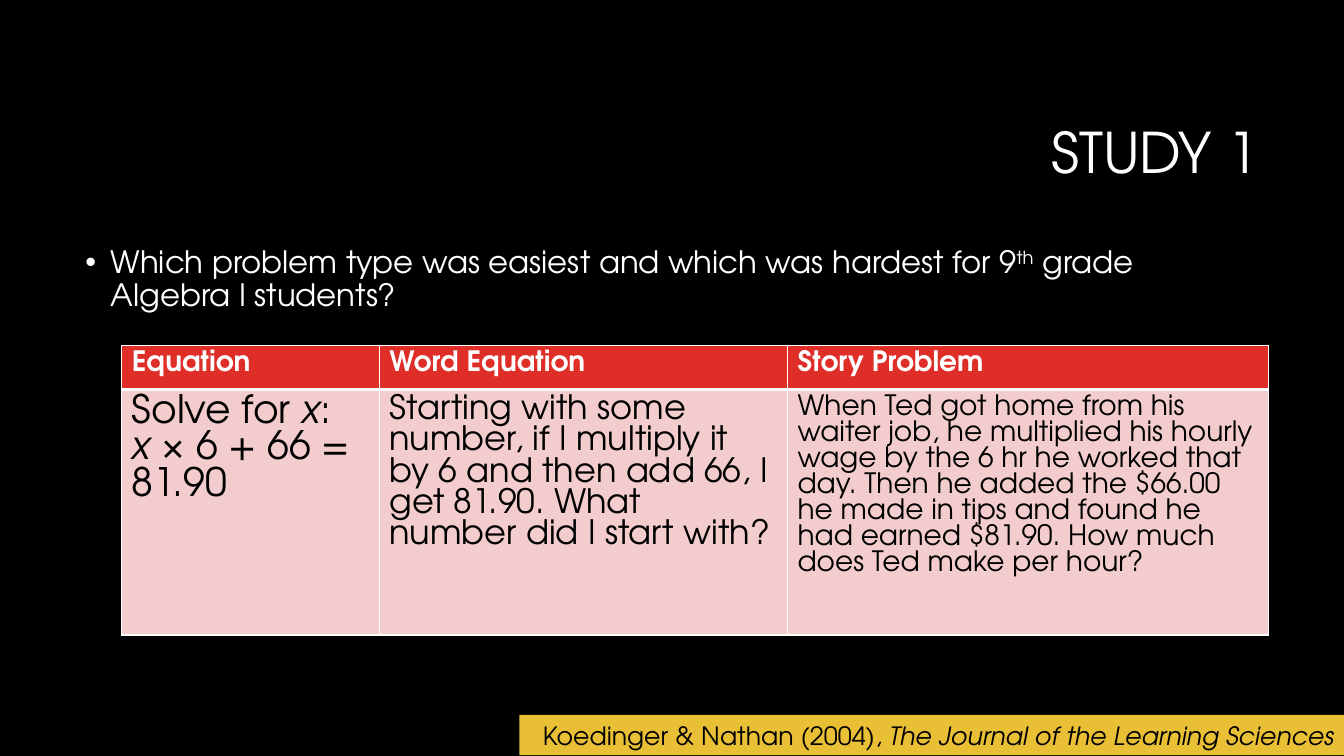
from pptx import Presentation
from pptx import util as u
from pptx.dml import color
from pptx.enum import shapes, text
from pptx.oxml import parse_xml, ns


def rgb(value):
    """Turn a hex string into a colour."""
    return color.RGBColor.from_string(value)


def write(tf, paragraphs, size, ink, font, bold=False, align="LEFT", spacing=1.0, bullet=False):
    """Write paragraphs, each a list of (text, style) runs, into a text frame."""
    tf.word_wrap = True
    for i, runs in enumerate(paragraphs):
        p = tf.paragraphs[0] if i == 0 else tf.add_paragraph()
        if bullet:
            pPr = p._p.get_or_add_pPr()
            pPr.set("marL", str(u.Pt(18)))
            pPr.set("indent", str(-u.Pt(18)))
            pPr.append(parse_xml(f'<a:buFont {ns.nsdecls("a")} typeface="Arial"/>'))
            pPr.append(parse_xml(f'<a:buChar {ns.nsdecls("a")} char="•"/>'))
        p.alignment = getattr(text.PP_ALIGN, align)
        p.line_spacing = spacing
        for words, style in runs:
            r = p.add_run()
            r.text = words
            r.font.name = font
            r.font.size = u.Pt(size)
            r.font.bold = bold
            r.font.italic = style == "italic"
            r.font.color.rgb = rgb(ink)
            if style == "super":
                r.font._element.set("baseline", "30000")


class Deck:
    """Holds the style and the current slide."""

    font = "TeX Gyre Adventor"
    black, white = "000000", "FFFFFF"
    red, pink, gold = "DF2E28", "F3CDCD", "E9BF35"

    def __init__(self, width, height):
        """Start a deck with one black slide."""
        self.prs = Presentation()
        self.prs.slide_width, self.prs.slide_height = u.Pt(width), u.Pt(height)
        self.s = self.prs.slides.add_slide(self.prs.slide_layouts[6])
        self.s.background.fill.solid()
        self.s.background.fill.fore_color.rgb = rgb(self.black)

    def textbox(self, box, paragraphs, size, anchor="TOP", **style):
        """Add a white text box."""
        tf = self.s.shapes.add_textbox(*map(u.Pt, box)).text_frame
        tf.vertical_anchor = getattr(text.MSO_ANCHOR, anchor)
        write(tf, paragraphs, size, self.white, self.font, **style)

    def bar(self, box, paragraphs, size, **style):
        """Add a gold bar with black text."""
        sp = self.s.shapes.add_shape(shapes.MSO_SHAPE.RECTANGLE, *map(u.Pt, box))
        sp.shadow.inherit = False
        sp.fill.solid()
        sp.fill.fore_color.rgb = rgb(self.gold)
        sp.line.fill.background()
        sp.text_frame.vertical_anchor = text.MSO_ANCHOR.TOP
        write(sp.text_frame, paragraphs, size, self.black, self.font, **style)

    def cell(self, cell, paragraphs, size, header):
        """Fill, border and write one table cell."""
        cell.fill.solid()
        cell.fill.fore_color.rgb = rgb(self.red if header else self.pink)
        tcPr = cell._tc.get_or_add_tcPr()
        for i, side in enumerate("LRTB"):
            wide = (side == "B" and header) or (side == "T" and not header)
            tcPr.insert(i, parse_xml(
                f'<a:ln{side} {ns.nsdecls("a")} w="{u.Pt(3 if wide else 1)}"><a:solidFill>'
                f'<a:srgbClr val="{self.white}"/></a:solidFill></a:ln{side}>'))
        write(cell.text_frame, paragraphs, size, self.white if header else self.black,
              self.font, bold=header)

    def table(self, left, top, widths, heights, columns):
        """Add a table from (heading, size, paragraphs) columns."""
        box = left, top, sum(widths), sum(heights)
        table = self.s.shapes.add_table(2, len(columns), *map(u.Pt, box)).table
        for row, height in zip(table.rows, heights):
            row.height = u.Pt(height)
        for i, (heading, size, paragraphs) in enumerate(columns):
            table.columns[i].width = u.Pt(widths[i])
            self.cell(table.cell(0, i), [[(heading, "")]], 20, True)
            self.cell(table.cell(1, i), paragraphs, size, False)


def main():
    """Build the slide and save it."""
    deck = Deck(960, 540)
    deck.textbox((228, 60.5, 678, 101.5), [[("STUDY 1", "")]], 40,
                 anchor="MIDDLE", align="RIGHT", spacing=0.9)
    deck.textbox((54, 172.8, 851.8, 316.8), [[
        ("Which problem type was easiest and which was hardest for 9", ""),
        ("th", "super"), (" grade Algebra I students?", "")]], 22, spacing=0.9, bullet=True)
    deck.table(87, 247, (184, 291.5, 343.5), (29.5, 136.5), [
        ("Equation", 28, [
            [("Solve for ", ""), ("x", "italic"), (":", "")],
            [("x ", "italic"), ("× 6 + 66 = 81.90", "")]]),
        ("Word Equation", 24, [
            [("Starting with some", "")],
            [("number, if I multiply it", "")],
            [("by 6 and then add 66, I get 81.90. What number did I start with?", "")]]),
        ("Story Problem", 20, [[(
            "When Ted got home from his waiter job, he multiplied his hourly wage by the 6 hr "
            "he worked that day. Then he added the $66.00 he made in tips and found he had "
            "earned $81.90. How much does Ted make per hour?", "")]])])
    deck.bar((371, 510.7, 589, 28.8), [[
        ("Koedinger & Nathan (2004), ", ""),
        ("The Journal of the Learning Sciences", "italic")]], 18, align="RIGHT")
    deck.prs.save("out.pptx")


if __name__ == "__main__":
    main()
